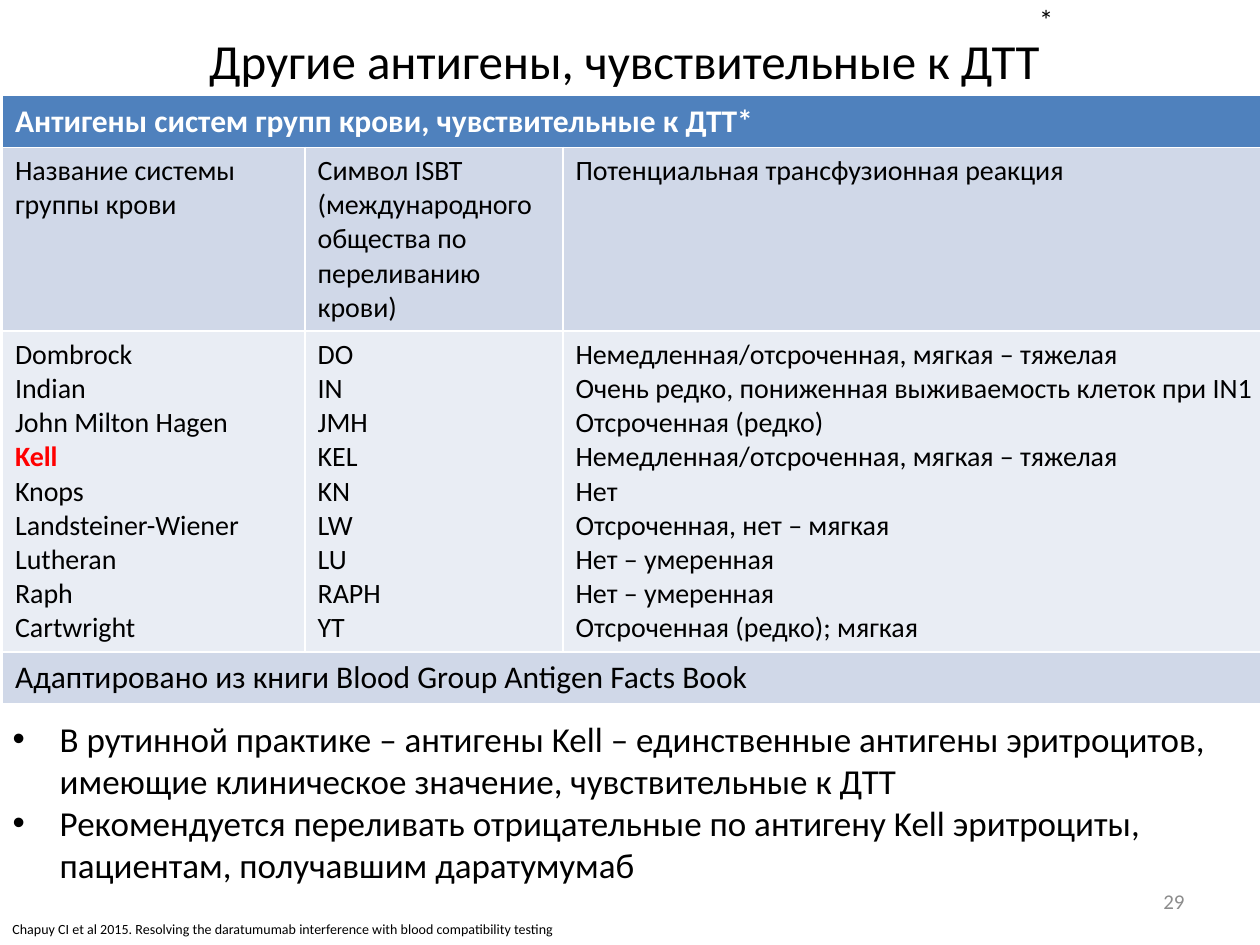
"""Build the slide on blood group antigens that are sensitive to DTT."""
from dataclasses import dataclass

from lxml.etree import SubElement
from pptx import Presentation
from pptx.dml.color import RGBColor as RGB
from pptx.enum.text import MSO_ANCHOR as Anchor, PP_ALIGN as Align
from pptx.oxml.ns import qn
from pptx.util import Cm, Pt


@dataclass(frozen=True)
class Theme:
    font: str = "Calibri"
    ink: RGB = RGB(0x00, 0x00, 0x00)
    light: RGB = RGB(0xFF, 0xFF, 0xFF)
    alert: RGB = RGB(0xFF, 0x00, 0x00)
    muted: RGB = RGB(0x8C, 0x8C, 0x8C)
    header: RGB = RGB(0x4F, 0x81, 0xBD)
    band: RGB = RGB(0xD0, 0xD8, 0xE8)
    pale: RGB = RGB(0xE9, 0xED, 0xF4)
    title: Pt = Pt(28)
    bullet: Pt = Pt(20)
    heading: Pt = Pt(18)
    cell: Pt = Pt(16)
    number: Pt = Pt(12)
    citation: Pt = Pt(8)


theme = Theme()


def write(paragraph, text, *, size, color=theme.ink, bold=False, align=Align.LEFT, baseline=None):
    paragraph.alignment = align
    run = paragraph.add_run()
    run.text = text
    run.font.name = theme.font
    run.font.size = size
    run.font.bold = bold
    run.font.color.rgb = color
    if baseline:
        run.font._element.set("baseline", str(baseline))


def place(box, left, top, width, height):
    box.left, box.top, box.width, box.height = Cm(left), Cm(top), Cm(width), Cm(height)


deck = Presentation()
deck.slide_width, deck.slide_height = Cm(25.4), Cm(19.05)
slide = deck.slides.add_slide(deck.slide_layouts[1])

title = slide.shapes.title
place(title, 0.9, 0.1, 23.65, 1.63)
title.text_frame.vertical_anchor = Anchor.MIDDLE
headline = title.text_frame.paragraphs[0]
write(headline, "Другие антигены, чувствительные к ДТТ", size=theme.title, align=Align.CENTER)
write(headline, "*", size=theme.title, align=Align.CENTER, baseline=100000)

conclusions = slide.placeholders[1]
place(conclusions, 0, 14.33, 25.4, 3.6)
statements = [
    "В рутинной практике – антигены Kell – единственные антигены эритроцитов, "
    "имеющие клиническое значение, чувствительные к ДТТ",
    "Рекомендуется переливать отрицательные по антигену Kell эритроциты, "
    "пациентам, получавшим даратумумаб",
]
for index, statement in enumerate(statements):
    frame = conclusions.text_frame
    paragraph = frame.add_paragraph() if index else frame.paragraphs[0]
    properties = paragraph._p.get_or_add_pPr()
    properties.set("marL", str(Cm(0.95)))
    properties.set("indent", str(-Cm(0.95)))
    SubElement(properties, qn("a:buFont"), typeface="Arial")
    SubElement(properties, qn("a:buChar"), char="•")
    paragraph.space_before = Pt(0)
    write(paragraph, statement, size=theme.bullet)

systems = ["Dombrock", "Indian", "John Milton Hagen", "Kell", "Knops",
           "Landsteiner-Wiener Lutheran", "Raph", "Cartwright"]
symbols = ["DO", "IN", "JMH", "KEL", "KN", "LW", "LU", "RAPH", "YT"]
reactions = [
    "Немедленная/отсроченная, мягкая – тяжелая",
    "Очень редко, пониженная выживаемость клеток при IN1",
    "Отсроченная (редко)",
    "Немедленная/отсроченная, мягкая – тяжелая",
    "Нет",
    "Отсроченная, нет – мягкая",
    "Нет – умеренная",
    "Нет – умеренная",
    "Отсроченная (редко); мягкая",
]
column_names = [
    ["Название системы группы крови"],
    ["Символ ISBT (международного общества по переливанию крови)"],
    ["Потенциальная трансфузионная реакция"],
]
rows = [
    ([["Антигены систем групп крови, чувствительные к ДТТ*"]], theme.header, theme.heading),
    (column_names, theme.band, theme.cell),
    ([systems, symbols, reactions], theme.pale, theme.cell),
    ([["Адаптировано из книги Blood Group Antigen Facts Book"]], theme.band, theme.heading),
]
antigens = slide.shapes.add_table(4, 3, Cm(0.05), Cm(1.93), Cm(25.4), Cm(12.04)).table
for column, width in zip(antigens.columns, (6.1, 5.2, 14.1)):
    column.width = Cm(width)
for row, height in zip(antigens.rows, (1.04, 3.6, 6.36, 1.04)):
    row.height = Cm(height)
for row_index, (contents, fill, size) in enumerate(rows):
    is_header = row_index == 0
    if len(contents) == 1:
        antigens.cell(row_index, 0).merge(antigens.cell(row_index, 2))
    for column_index, lines in enumerate(contents):
        cell = antigens.cell(row_index, column_index)
        cell.fill.solid()
        cell.fill.fore_color.rgb = fill
        for index, line in enumerate(lines):
            frame = cell.text_frame
            paragraph = frame.add_paragraph() if index else frame.paragraphs[0]
            is_kell = line == "Kell"
            color = theme.light if is_header else theme.alert if is_kell else theme.ink
            write(paragraph, line, size=size, color=color, bold=is_header or is_kell)
antigens.cell(2, 2).margin_right = Cm(0)

page = slide.shapes.add_textbox(Cm(18.2), Cm(17.66), Cm(5.93), Cm(1.01)).text_frame
page.word_wrap = True
page.vertical_anchor = Anchor.MIDDLE
write(page.paragraphs[0], "29", size=theme.number, color=theme.muted, align=Align.RIGHT)

source = slide.shapes.add_textbox(Cm(0), Cm(18.44), Cm(11.53), Cm(0.6)).text_frame
source.word_wrap = False
write(source.paragraphs[0],
      "Chapuy CI et al 2015. Resolving the daratumumab interference with blood compatibility testing",
      size=theme.citation)

deck.save("out.pptx")
